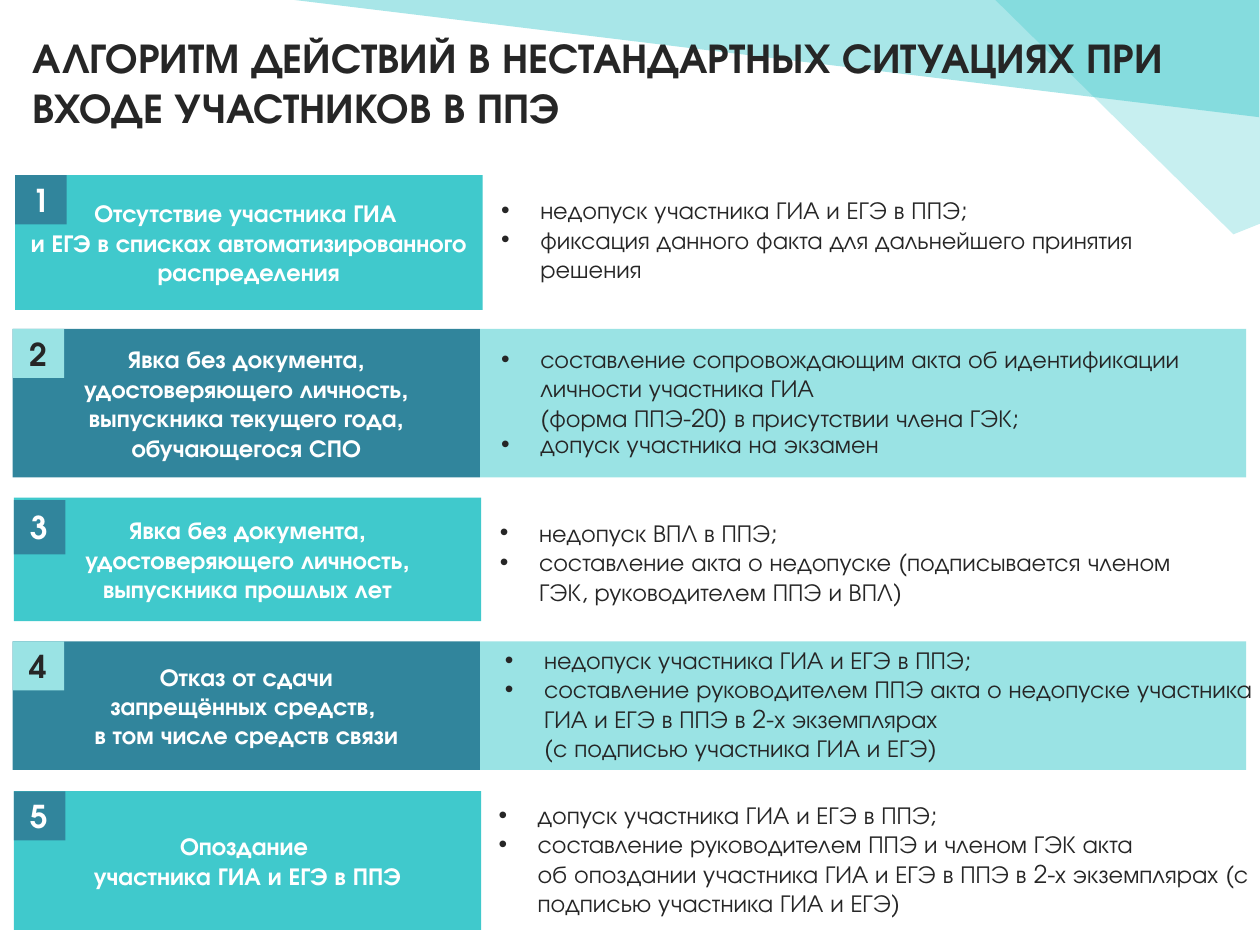
from copy import deepcopy

from lxml import etree
from pptx import Presentation
from pptx.dml.color import RGBColor
from pptx.enum.shapes import MSO_SHAPE
from pptx.enum.text import MSO_ANCHOR, PP_ALIGN
from pptx.oxml.ns import qn
from pptx.util import Inches, Pt

RECT = MSO_SHAPE.RECTANGLE
MIDDLE = MSO_ANCHOR.MIDDLE
LEFT, CENTER = PP_ALIGN.LEFT, PP_ALIGN.CENTER

FONT = "TeX Gyre Adventor"
ACCENT = RGBColor(0x20, 0xC0, 0xC4)
TURQUOISE = RGBColor(0x40, 0xC9, 0xCC)
TEAL = RGBColor(0x31, 0x85, 0x9C)
PALE = RGBColor(0x9A, 0xE3, 0xE4)
DARK = RGBColor(0x26, 0x26, 0x26)
WHITE = RGBColor(0xFF, 0xFF, 0xFF)


def write(paragraph, text, size, color, bold=False, align=LEFT):
    """Add one run per line, with line breaks of the same size between them."""
    paragraph.alignment = align
    for i, line in enumerate(text.split("\n")):
        if i:
            paragraph.add_line_break()
        run = paragraph.add_run()
        run.text = line
        run.font.name = FONT
        run.font.size = Pt(size)
        run.font.bold = bold
        run.font.color.rgb = color
    for line_break in paragraph._p.findall(qn("a:br")):
        line_break.append(deepcopy(run._r.rPr))


def add_block(left, top, width, height, fill, text="", size=14, color=WHITE):
    block = slide.shapes.add_shape(
        RECT, Inches(left), Inches(top), Inches(width), Inches(height))
    block.shadow.inherit = False
    block.fill.solid()
    block.fill.fore_color.rgb = fill
    block.line.fill.background()
    if text:
        block.text_frame.word_wrap = True
        block.text_frame.vertical_anchor = MIDDLE
        write(block.text_frame.paragraphs[0], text, size, color, True, CENTER)


prs = Presentation()
prs.slide_width, prs.slide_height = Inches(10), Inches(7.5)
slide = prs.slides.add_slide(prs.slide_layouts[6])

# Translucent corner shards: outline points and opacity in percent
shards = [
    ([(2.17, -0.02), (9.99, 0.93), (9.99, -0.03)], 39),
    ([(10.04, 1.76), (9.79, 1.86), (7.9, 0), (10.03, 0), (10.03, 1.78)], 25),
]
for points, opacity in shards:
    corners = [(Inches(x), Inches(y)) for x, y in points]
    builder = slide.shapes.build_freeform(*corners[0])
    builder.add_line_segments(corners[1:], close=True)
    shard = builder.convert_to_shape()
    shard.shadow.inherit = False
    shard.fill.solid()
    shard.fill.fore_color.rgb = ACCENT
    shard.line.fill.background()
    tint = shard._element.spPr.find(qn("a:solidFill"))[0]
    etree.SubElement(tint, qn("a:alpha")).set("val", str(opacity * 1000))

# Title
title = slide.shapes.add_textbox(
    Inches(0.16), Inches(0.07), Inches(9.8), Inches(1.16)).text_frame
title.word_wrap = True
title.vertical_anchor = MIDDLE
write(title.paragraphs[0],
      "АЛГОРИТМ ДЕЙСТВИЙ В НЕСТАНДАРТНЫХ СИТУАЦИЯХ ПРИ ВХОДЕ УЧАСТНИКОВ В ППЭ",
      24, DARK, True)

# Situations: block (left, top, height), badge (top, height),
# situation, actions box (left, top, width, height), actions
situations = [
    ((0.12, 1.39, 1.07), (1.39, 0.39),
     "Отсутствие участника ГИА \n"
     "и ЕГЭ в списках автоматизированного распределения",
     (3.88, 1.5, 5.46, 0.81),
     ["недопуск участника ГИА и ЕГЭ в ППЭ;",
      "фиксация данного факта для дальнейшего принятия решения"]),
    ((0.1, 2.61, 1.18), (2.61, 0.39),
     "Явка без документа, удостоверяющего личность, "
     "выпускника текущего года, обучающегося СПО",
     (3.88, 2.68, 5.96, 1.02),
     ["составление сопровождающим акта об идентификации "
      "личности участника ГИА \n(форма ППЭ-20) в присутствии члена ГЭК;",
      "допуск участника на экзамен"]),
    ((0.11, 3.95, 0.98), (3.97, 0.43),
     "Явка без документа, удостоверяющего личность, выпускника прошлых лет",
     (3.87, 4.06, 5.87, 0.81),
     ["недопуск ВПЛ в ППЭ;",
      "составление акта о недопуске (подписывается членом ГЭК, "
      "руководителем ППЭ и ВПЛ)"]),
    ((0.1, 5.09, 1.02), (5.09, 0.39),
     "Отказ от сдачи\nзапрещённых средств, \nв том числе средств связи",
     (3.91, 5.07, 6.17, 1.04),
     ["недопуск участника ГИА и ЕГЭ в ППЭ;",
      "составление руководителем ППЭ акта о недопуске участника "
      "ГИА и ЕГЭ в ППЭ в 2-х экземплярах \n(с подписью участника ГИА и ЕГЭ)"]),
    ((0.11, 6.28, 1.1), (6.28, 0.39),
     "Опоздание \nучастника ГИА и ЕГЭ в ППЭ",
     (3.86, 6.3, 6.17, 1.04),
     ["допуск участника ГИА и ЕГЭ в ППЭ;",
      "составление руководителем ППЭ и членом ГЭК акта \n"
      "об опоздании участника ГИА и ЕГЭ в ППЭ в 2-х экземплярах "
      "(с подписью участника ГИА и ЕГЭ)"]),
]

for number, (block, badge, situation, box, actions) in enumerate(situations, 1):
    left, top, height = block
    even = number % 2 == 0

    # Coloured blocks; even rows also have a pale panel behind the actions
    if even:
        add_block(3.81, top, 6.08, height, PALE)
    add_block(left, top, 3.71, height, TEAL if even else TURQUOISE, situation)
    add_block(left, badge[0], 0.41, badge[1], PALE if even else TEAL,
              str(number), 18, DARK if even else WHITE)

    # Bulleted actions
    frame = slide.shapes.add_textbox(*map(Inches, box)).text_frame
    frame.word_wrap = True
    for i, action in enumerate(actions):
        paragraph = frame.add_paragraph() if i else frame.paragraphs[0]
        write(paragraph, action, 14, DARK)
        if number == 2 and i == 1:
            paragraph.line_spacing = 0.9
        properties = paragraph._p.get_or_add_pPr()
        properties.set("marL", str(Inches(0.31)))
        properties.set("indent", str(Inches(-0.31)))
        etree.SubElement(properties, qn("a:buFont")).set("typeface", "Arial")
        etree.SubElement(properties, qn("a:buChar")).set("char", "•")

prs.save("out.pptx")
